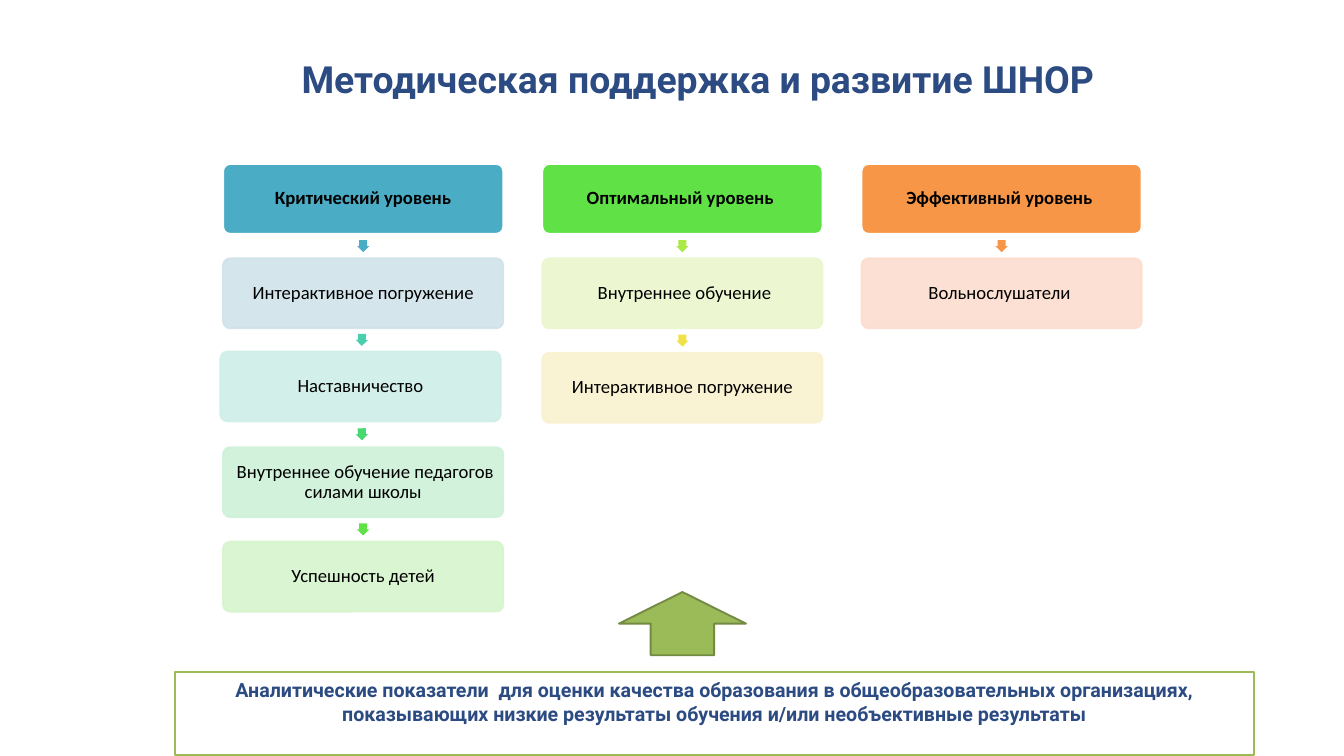
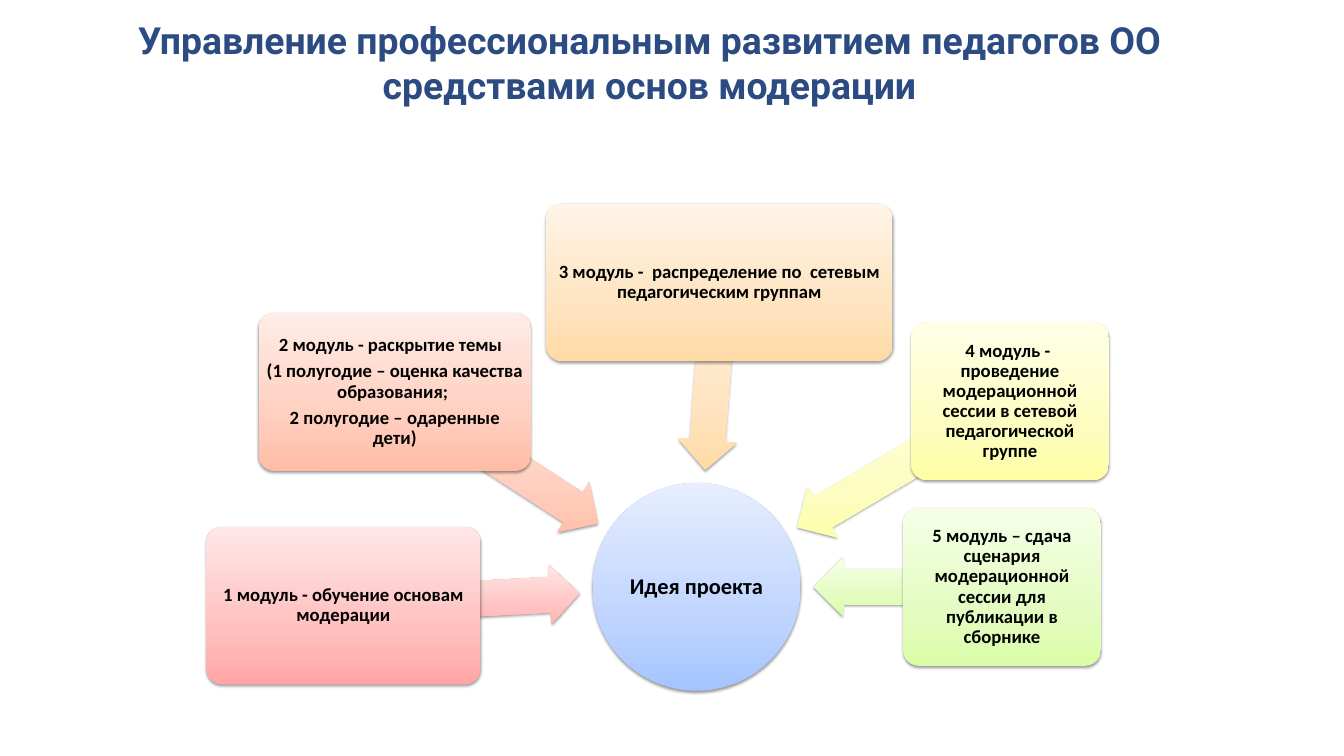
import copy
import math

import pptx
import pptx.dml.color
import pptx.enum.shapes
import pptx.enum.text
import pptx.oxml.ns
import pptx.util
from lxml import etree

COLORS = {
    "title": "2B4B82", "text": "000000", "white": "FFFFFF",
    "green": "9BBB59", "green_edge": "738A42",
}
GRADIENTS = {
    "blue": ("A4C4FF", "BFD4FF", "E6EEFF"),
    "red": ("FFA6A5", "FFC0BF", "FFE7E7"),
    "coral": ("FFBCA5", "FFCFBF", "FFECE7"),
    "orange": ("FFDAA5", "FEE4C0", "FFF4E7"),
    "yellow": ("FEFEA6", "FDFDC1", "FFFFE7"),
    "lime": ("DAFDA7", "E4FCC2", "F5FFE7"),
}
STOPS = (0, 0.35, 1)
SLIDE = (0, 0, 20, 11.25)
SHAPE = pptx.enum.shapes.MSO_SHAPE
ANCHOR = pptx.enum.text.MSO_ANCHOR
Inches, Pt, qn = pptx.util.Inches, pptx.util.Pt, pptx.oxml.ns.qn

LEVELS = [
    [("Критический уровень", "4BACC6", None),
     ("Интерактивное погружение", "D0E3EA", "4BACC6"),
     ("Наставничество", "CFEEE8", "49CFAE"),
     (" Внутреннее обучение педагогов силами школы", "CFF1D9", "47D872"),
     ("Успешность детей", "D6F4CE", "60E146")],
    [("Оптимальный уровень ", "60E146", None),
     (" Внутреннее обучение", "EBF7CE", "ACE946"),
     ("Интерактивное погружение", "F9F1CF", "F0E146")],
    [("Эффективный уровень ", "F79646", None),
     ("Вольнослушатели ", "FCDDCF", "F79646")],
]
NUDGES = {(0, 2): (-0.29, -0.3)}
MODULES = [
    ("red", (0, 66.34, 30.38), ["1 модуль - обучение основам модерации"]),
    ("coral", (5.81, 22.48, 30.16),
     ["2 модуль - раскрытие темы  ",
      "(1 полугодие – оценка качества образования; ",
      "2 полугодие – одаренные дети)"]),
    ("orange", (37.68, 0, 38.35),
     ["3 модуль -  распределение по  сетевым педагогическим группам"]),
    ("yellow", (78.11, 24.41, 21.89),
     ["4 модуль -  проведение модерационной сессии в сетевой педагогической группе"]),
    ("lime", (77.22, 62.48, 21.89),
     ["5 модуль – сдача сценария модерационной сессии для публикации в сборнике"]),
]


def rgb(value):
    return pptx.dml.color.RGBColor.from_string(value)


def within(box, left, top, width, height):
    x, y, w, h = box
    return (x + w * left / 100, y + h * top / 100, w * width / 100, h * height / 100)


def center(box):
    x, y, w, h = box
    return x + w / 2, y + h / 2


def add_shape(s, kind, box, adj=()):
    sp = s.shapes.add_shape(kind, *map(Inches, box))
    sp.shadow.inherit = False
    sp.line.fill.background()
    for i, value in enumerate(adj):
        sp.adjustments[i] = value
    return sp


def paint(sp, fill, line=None, alpha=None):
    sp.fill.solid()
    sp.fill.fore_color.rgb = rgb(fill)
    if line:
        sp.line.color.rgb = rgb(line)
        sp.line.width = Pt(2)
    if alpha:
        for clr in sp._element.spPr.iter(qn("a:srgbClr")):
            etree.SubElement(clr, qn("a:alpha"), val=str(alpha * 1000))


def paint_gradient(sp, name):
    sp.fill.gradient()
    sp.fill.gradient_angle = 90
    grad = sp._element.spPr.find(qn("a:gradFill"))
    grad.set("rotWithShape", "0")
    stops = grad.find(qn("a:gsLst"))
    stops.append(copy.deepcopy(stops[0]))
    for stop, position, color in zip(sp.fill.gradient_stops, STOPS, GRADIENTS[name]):
        stop.position = position
        stop.color.rgb = rgb(color)
    effects = sp._element.spPr.find(qn("a:effectLst"))
    shadow = etree.SubElement(effects, qn("a:outerShdw"), blurRad=str(Pt(3.1)),
                              dist=str(Pt(1.6)), dir="5400000", rotWithShape="0")
    clr = etree.SubElement(shadow, qn("a:srgbClr"), val=COLORS["text"])
    etree.SubElement(clr, qn("a:alpha"), val="38000")


def write(sp, lines, size, inset, font="Calibri", color="text", bold=True,
          anchor=ANCHOR.MIDDLE, compact=True):
    tf = sp.text_frame
    tf.word_wrap = True
    tf.auto_size = pptx.enum.text.MSO_AUTO_SIZE.NONE
    tf.vertical_anchor = anchor
    tf.margin_left = tf.margin_right = Inches(inset[0])
    tf.margin_top = tf.margin_bottom = Inches(inset[1])
    tf.text = "\n".join(lines)
    for p in tf.paragraphs:
        p.alignment = pptx.enum.text.PP_ALIGN.CENTER
        p.font.name, p.font.size, p.font.bold = font, Pt(size), bold
        p.font.color.rgb = rgb(COLORS[color])
        if compact:
            p.line_spacing = 0.9
            p.space_after = Pt(size * 0.35)


def add_titled_slide(prs, title, box):
    s = prs.slides.add_slide(prs.slide_layouts[5])
    sp = s.shapes.title
    sp.left, sp.top, sp.width, sp.height = map(Inches, box)
    write(sp, [title], 40, (0.1, 0.05), "Roboto", "title", compact=False)
    return s


def step_arrow(s, start, end, color):
    (x1, y1), (x2, y2) = center(start), center(end)
    size = 0.18
    box = ((x1 + x2 - size) / 2, (y1 + y2 - size) / 2, size, size)
    sp = add_shape(s, SHAPE.RIGHT_ARROW, box, (0.667, 0.5))
    sp.rotation = math.degrees(math.atan2(y2 - y1, x2 - x1))
    paint(sp, color)


def level_columns(s, box):
    for col, steps in enumerate(LEVELS):
        previous = None
        for row, (text, fill, arrow) in enumerate(steps):
            dx, dy = NUDGES.get((col, row), (0, 0))
            cell = within(box, col * 34.75 + dx, row * 21.1 + dy, 30.5, 15.62)
            if previous:
                step_arrow(s, previous, cell, arrow)
            header = row == 0
            sp = add_shape(s, SHAPE.ROUNDED_RECTANGLE, cell, (0.1,))
            paint(sp, fill, COLORS["white"] if header else fill, None if header else 90)
            write(sp, [text], 20, (0.03, 0.03), bold=header)
            previous = cell


def indicators(s, box):
    sp = add_shape(s, SHAPE.RECTANGLE, within(box, 0, 49, 100, 51))
    paint(sp, COLORS["white"], COLORS["green"])
    write(sp, ["Аналитические показатели  для оценки качества образования в "
               "общеобразовательных организациях, показывающих низкие результаты "
               "обучения и/или необъективные результаты"],
          21, (0.18, 0.09), "Roboto", "title", anchor=ANCHOR.TOP, compact=False)
    sp = add_shape(s, SHAPE.UP_ARROW, within(box, 41.16, 0, 11.77, 38.7))
    paint(sp, COLORS["green"], COLORS["green_edge"])


def module_arrow(s, module, hub, name):
    (x1, y1), (x2, y2) = center(module), center(hub)
    thickness = hub[2] * 0.285
    length = math.dist((x1, y1), (x2, y2)) - hub[2] * 0.565
    angle = math.atan2(y2 - y1, x2 - x1)
    x = x1 + length / 2 * math.cos(angle)
    y = y1 + length / 2 * math.sin(angle)
    box = (x - length / 2, y - thickness / 2, length, thickness)
    sp = add_shape(s, SHAPE.LEFT_ARROW, box, (0.6, 0.5))
    sp.rotation = (math.degrees(angle) + 180) % 360
    paint_gradient(sp, name)


def module_diagram(s, box):
    hub = within(box, 42.81, 57.38, 23.01, 42.62)
    sp = add_shape(s, SHAPE.OVAL, hub)
    paint_gradient(sp, "blue")
    write(sp, ["Идея проекта"], 24, (0.02, 0.02))
    for name, (left, top, width), lines in MODULES:
        module = within(box, left, top, width, 32.41)
        module_arrow(s, module, hub, name)
        sp = add_shape(s, SHAPE.ROUNDED_RECTANGLE, module, (0.1,))
        paint_gradient(sp, name)
        write(sp, lines, 20, (0.04, 0.04))


def main():
    prs = pptx.Presentation()
    prs.slide_width, prs.slide_height = Inches(SLIDE[2]), Inches(SLIDE[3])

    s = add_titled_slide(prs, "Методическая поддержка и развитие ШНОР",
                         within(SLIDE, 19.9, 4.89, 64.05, 11.11))
    level_columns(s, within(SLIDE, 16.6, 21.69, 68.35, 59.2))
    indicators(s, within(SLIDE, 13, 78.31, 80.3, 21.6))

    s = add_titled_slide(prs, "Управление профессиональным развитием педагогов ОО "
                         "средствами основ модерации",
                         within(SLIDE, 2.5, 2.67, 91.65, 11.11))
    module_diagram(s, within(SLIDE, 15.35, 26.93, 67.15, 64.44))

    prs.save("out.pptx")


if __name__ == "__main__":
    main()
